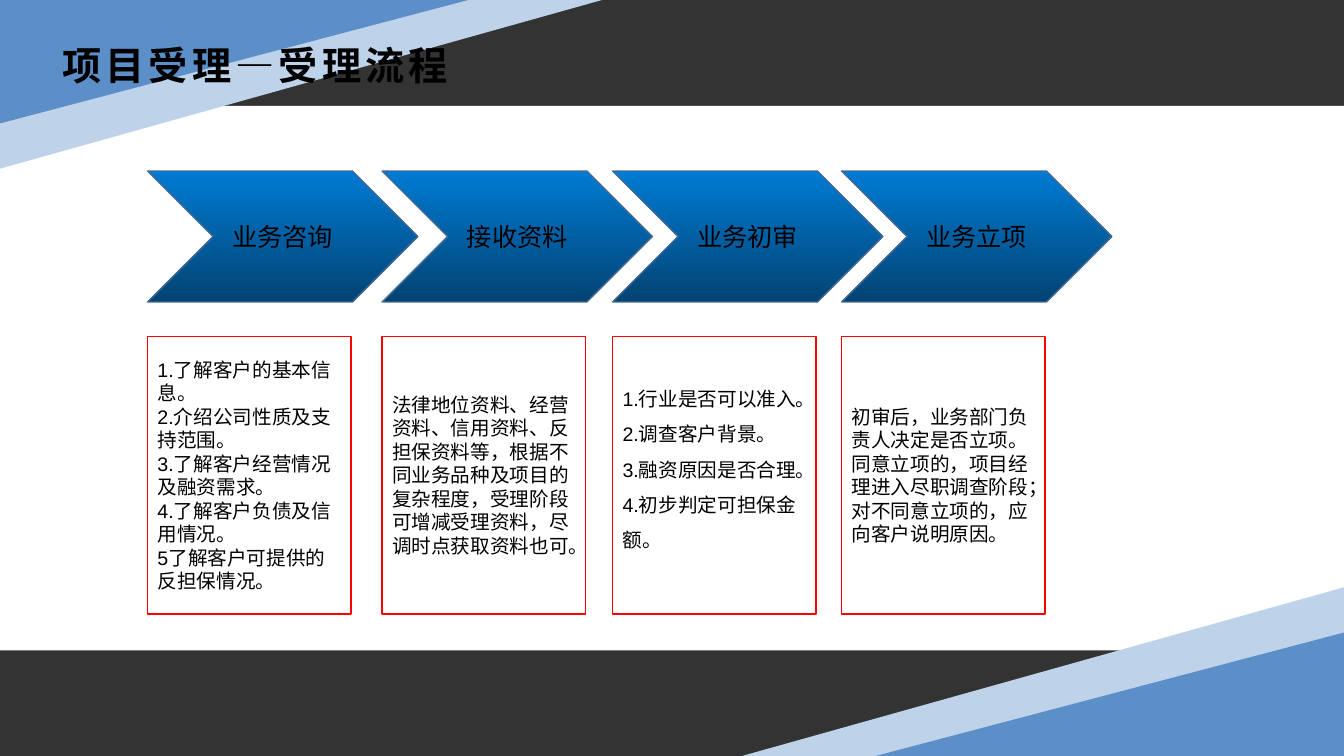
from lxml.etree import SubElement
from pptx import Presentation
from pptx.dml.color import RGBColor
from pptx.enum.shapes import MSO_SHAPE
from pptx.enum.text import MSO_ANCHOR, PP_ALIGN
from pptx.oxml.ns import qn
from pptx.util import Cm, Pt

WIDTH, HEIGHT = 33.87, 19.05
CJK_FONT = "Noto Sans CJK SC"

STEPS = [
    (3.72, "业务咨询", [
        "1.了解客户的基本信息。",
        "2.介绍公司性质及支持范围。",
        "3.了解客户经营情况及融资需求。",
        "4.了解客户负债及信用情况。",
        "5了解客户可提供的反担保情况。",
    ], 1.0, 0.13),
    (9.63, "接收资料", [
        "法律地位资料、经营资料、信用资料、反担保资料等，根据不同业务品种及项目的"
        "复杂程度，受理阶段可增减受理资料，尽调时点获取资料也可。",
    ], 1.0, 0.13),
    (15.44, "业务初审", [
        "1.行业是否可以准入。",
        "2.调查客户背景。",
        "3.融资原因是否合理。",
        "4.初步判定可担保金额。",
    ], 1.5, 0.72),
    (21.21, "业务立项", [
        "初审后，业务部门负责人决定是否立项。同意立项的，项目经理进入尽职调查阶段；"
        "对不同意立项的，应向客户说明原因。",
    ], 1.0, 0.13),
]


def color(value):
    return RGBColor.from_string(value)


def add_box(slide, kind, left, top, width, height, fill=None, line=None):
    shape = slide.shapes.add_shape(kind, Cm(left), Cm(top), Cm(width), Cm(height))
    shape.shadow.inherit = False
    if fill:
        shape.fill.solid()
        shape.fill.fore_color.rgb = color(fill)
    else:
        shape.fill.background()
    if line:
        shape.line.color.rgb = color(line)
        shape.line.width = Pt(1)
    else:
        shape.line.fill.background()
    return shape


def write(shape, texts, size, font="Arial", align=PP_ALIGN.LEFT, spacing=1.0, bold=False):
    frame = shape.text_frame
    frame.word_wrap = True
    frame.vertical_anchor = MSO_ANCHOR.MIDDLE
    for index, text in enumerate(texts):
        paragraph = frame.add_paragraph() if index else frame.paragraphs[0]
        paragraph.alignment = align
        paragraph.line_spacing = spacing
        run = paragraph.add_run()
        run.text = text
        run.font.size = Pt(size)
        run.font.bold = bold
        run.font.name = font
        run.font.color.rgb = color("000000")
        SubElement(run.font._element, qn("a:ea"), typeface=CJK_FONT)


def add_corner(slide, left, top, width, height, fill, rotation):
    triangle = add_box(slide, MSO_SHAPE.ISOSCELES_TRIANGLE, left, top, width, height, fill)
    triangle.adjustments[0] = 1
    triangle.rotation = rotation


def add_backdrop(slide):
    slide.background.fill.solid()
    slide.background.fill.fore_color.rgb = color("333333")
    add_box(slide, MSO_SHAPE.RECTANGLE, 0, 2.67, WIDTH, 13.72, "FFFFFF")
    for width, height, fill in [(15.17, 4.25, "BED2E9"), (11.8, 3.11, "5C8FC7")]:
        add_corner(slide, 0, 0, width, height, fill, 180)
        add_corner(slide, WIDTH - width, HEIGHT - height, width, height, fill, 0)


def add_title(slide, left, top, width, height):
    title = slide.shapes.add_textbox(Cm(left), Cm(top), Cm(width), Cm(height))
    write(title, ["项目受理—受理流程"], 28, CJK_FONT, spacing=1.2, bold=True)
    title.text_frame.paragraphs[0].runs[0].font._element.set("spc", "300")


def add_step(slide, left, top, name, details, spacing, bottom_margin):
    chevron = add_box(slide, MSO_SHAPE.CHEVRON, left, top, 6.81, 3.3, line="446A93")
    chevron.fill.gradient()
    chevron.fill.gradient_angle = 270
    for stop, value in zip(chevron.fill.gradient_stops, ["007BD3", "034373"]):
        stop.color.rgb = color(value)
    write(chevron, [name], 18, align=PP_ALIGN.CENTER)

    panel = add_box(slide, MSO_SHAPE.RECTANGLE, left, top + 4.17, 5.13, 6.99, line="FF0000")
    panel.text_frame.margin_bottom = Cm(bottom_margin)
    write(panel, details, 14, spacing=spacing)


def main():
    presentation = Presentation()
    presentation.slide_width = Cm(WIDTH)
    presentation.slide_height = Cm(HEIGHT)
    slide = presentation.slides.add_slide(presentation.slide_layouts[6])
    add_backdrop(slide)
    add_title(slide, 1.32, 0.66, 10.44, 1.73)
    for left, *content in STEPS:
        add_step(slide, left, 4.31, *content)
    presentation.save("out.pptx")


if __name__ == "__main__":
    main()
